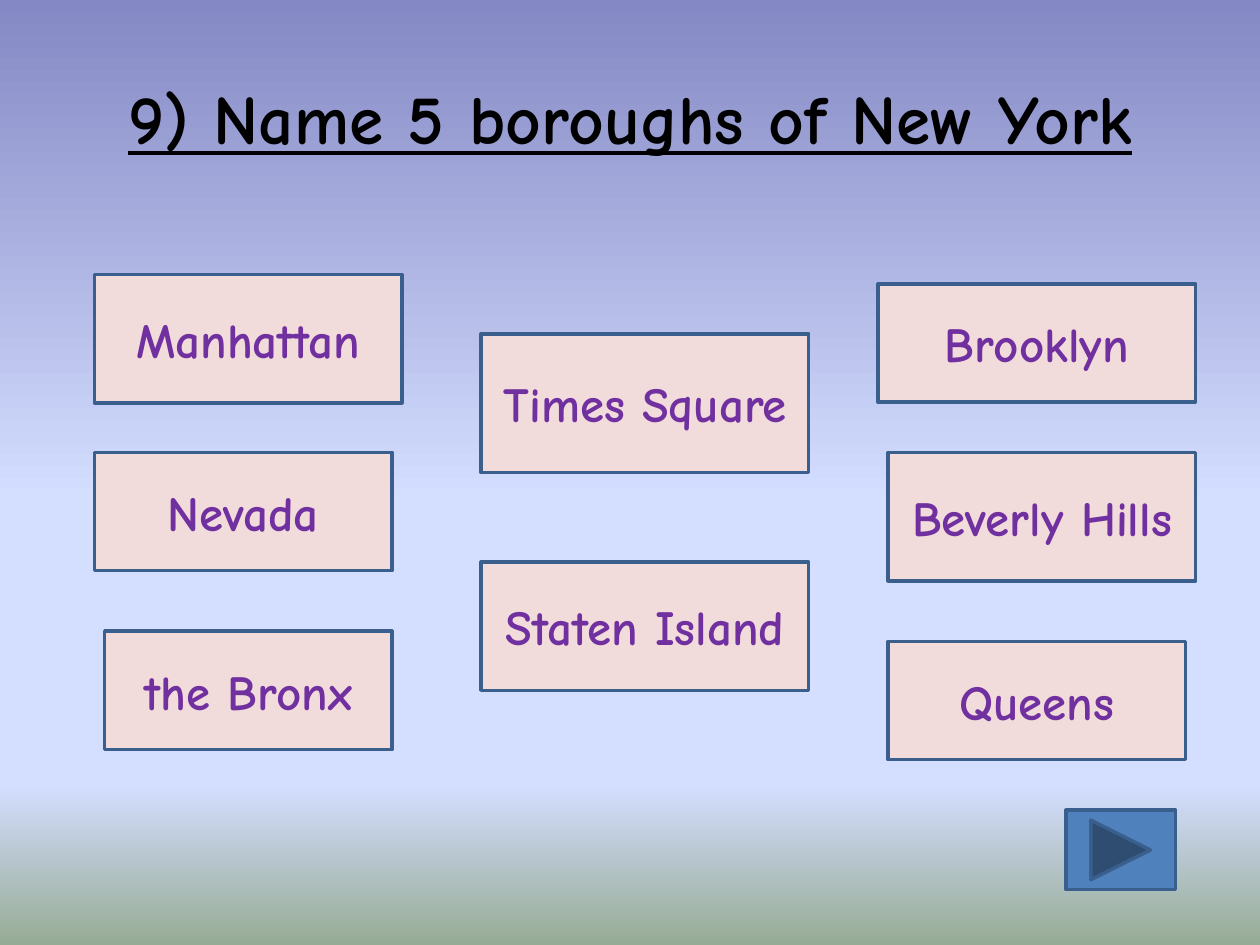
from dataclasses import dataclass

from lxml.etree import SubElement
from pptx import Presentation
from pptx.dml.color import RGBColor
from pptx.enum.shapes import MSO_SHAPE as Preset
from pptx.enum.text import MSO_ANCHOR as Anchor, MSO_AUTO_SIZE as AutoSize, PP_ALIGN as Align
from pptx.oxml.ns import qn
from pptx.util import Pt

FONT = "Comic Neue"
OUTLINE = "3A5F8C"
SKY_STOPS = [(0, "8488C4"), (53, "D4DEFF"), (83, "D4DEFF"), (100, "96AB94")]


@dataclass
class Answer:
    text: str
    left: float
    top: float
    width: float
    height: float


ANSWERS = [
    Answer("Manhattan", 54, 156.8, 175.7, 73.4),
    Answer("Staten Island", 275, 321.1, 187.2, 73.4),
    Answer("Nevada", 54, 258.5, 169.9, 67.7),
    Answer("the Bronx", 59.8, 360.7, 164.2, 67.7),
    Answer("Queens", 507.6, 366.5, 169.9, 67.7),
    Answer("Beverly Hills", 507.6, 258.5, 175.7, 73.4),
    Answer("Brooklyn", 501.8, 162.2, 181.4, 67.7),
    Answer("Times Square", 275, 190.8, 187.2, 79.2),
]


def color(value: str) -> RGBColor:
    return RGBColor.from_string(value)


def paint_background(slide) -> None:
    fill = slide.background.fill
    fill.gradient()
    fill.gradient_angle = 270  # counter-clockwise: runs from top to bottom
    stops = slide.element.find(".//" + qn("a:gsLst"))
    for stop in list(stops):
        stops.remove(stop)
    for percent, value in SKY_STOPS:
        stop = SubElement(stops, qn("a:gs"), pos=str(percent * 1000))
        SubElement(stop, qn("a:srgbClr"), val=value)


def set_text(shape, text: str, size: float, value: str, underline: bool = False) -> None:
    text_frame = shape.text_frame
    text_frame.text = text
    text_frame.word_wrap = True
    text_frame.auto_size = AutoSize.NONE
    text_frame.vertical_anchor = Anchor.MIDDLE
    paragraph = text_frame.paragraphs[0]
    paragraph.alignment = Align.CENTER
    font = paragraph.runs[0].font
    font.name, font.size, font.bold = FONT, Pt(size), True
    font.underline = underline
    font.color.rgb = color(value)


def add_box(slide, preset, left: float, top: float, width: float, height: float, fill: str):
    shape = slide.shapes.add_shape(preset, Pt(left), Pt(top), Pt(width), Pt(height))
    shape.shadow.inherit = False
    shape.fill.solid()
    shape.fill.fore_color.rgb = color(fill)
    shape.line.color.rgb = color(OUTLINE)
    shape.line.width = Pt(2)
    return shape


def main() -> None:
    presentation = Presentation()
    presentation.slide_width, presentation.slide_height = Pt(720), Pt(540)
    slide = presentation.slides.add_slide(presentation.slide_layouts.get_by_name("Title Only"))
    paint_background(slide)

    # Question
    title = slide.shapes.title
    title.left, title.top, title.width, title.height = Pt(36), Pt(21.6), Pt(648), Pt(90)
    set_text(title, "9) Name 5 boroughs of New York", 39.6, "000000", underline=True)

    # Possible answers
    for answer in ANSWERS:
        box = add_box(slide, Preset.RECTANGLE, answer.left, answer.top,
                      answer.width, answer.height, "F2DCDB")
        set_text(box, answer.text, 28, "7030A0")

    # Button to the next question
    add_box(slide, Preset.ACTION_BUTTON_FORWARD_OR_NEXT, 609.1, 463, 62.6, 45.4, "4F81BD")

    presentation.save("out.pptx")


if __name__ == "__main__":
    main()
